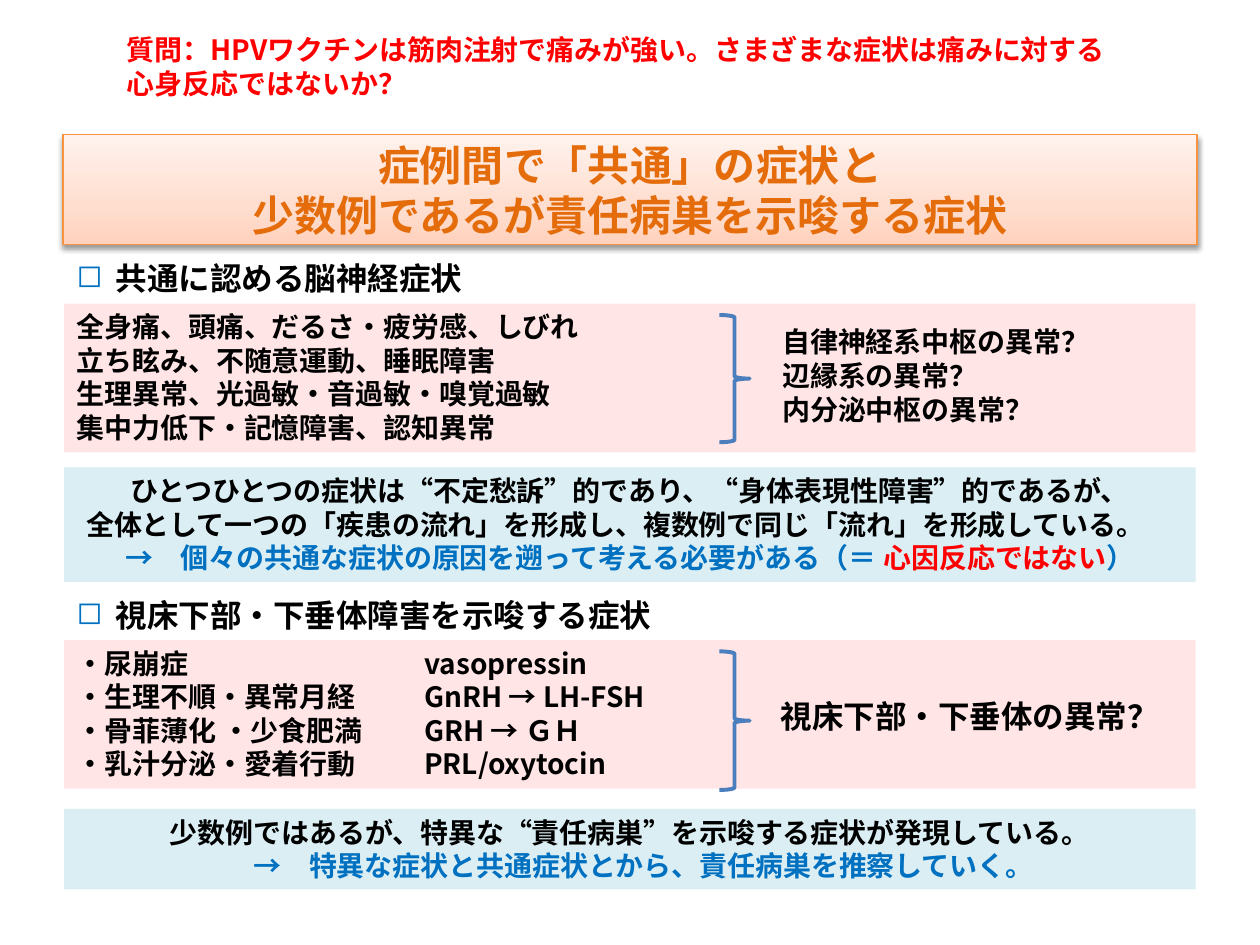
from copy import deepcopy
from dataclasses import dataclass

from pptx import Presentation
from pptx import util as u
from pptx.dml.color import RGBColor
from pptx.enum import shapes, text
from pptx.oxml import parse_xml
from pptx.oxml.ns import nsdecls, qn


@dataclass(frozen=True)
class Theme:
    font: str = "Noto Sans CJK JP"
    ink: str = "000000"
    red: str = "FF0000"
    blue: str = "0070C0"
    orange: str = "E46C0A"
    edge: str = "F69240"
    brace: str = "4B7EBC"
    pale_blue: str = "DBEEF4"
    gradient: tuple = ((0, "FFD2BD"), (0.35, "FFDED0"), (1, "FFF2ED"))
    title: int = 24
    heading: int = 18
    body: int = 16


THEME = Theme()
WIDTH, HEIGHT = 10, 7.5
LEFT, BAND = 0.51, 8.98          # left edge and width shared by all bands
BRACE_LEFT, BRACE_WIDTH = 5.71, 0.24
CENTER = text.PP_ALIGN.CENTER

TITLE = "症例間で「共通」の症状と\v少数例であるが責任病巣を示唆する症状"
QUESTION = ["質問：HPVワクチンは筋肉注射で痛みが強い。さまざまな症状は痛みに対する\t心身反応ではないか？"]

# A line is a string, or a list of (text, colour) pieces.
SECTIONS = [
    {
        "top": 2.01,
        "heading": "共通に認める脳神経症状",
        "symptoms": [
            "全身痛、頭痛、だるさ・疲労感、しびれ",
            "立ち眩み、不随意運動、睡眠障害",
            "生理異常、光過敏・音過敏・嗅覚過敏",
            "集中力低下・記憶障害、認知異常",
        ],
        "brace": (2.5, 1.01),
        "cause": ["自律神経系中枢の異常？", "辺縁系の異常？", "内分泌中枢の異常？"],
        "cause_at": (6.11, 2.53, 2.99, 0.91),
        "cause_size": THEME.body,
        "summary": [
            "ひとつひとつの症状は“不定愁訴”的であり、“身体表現性障害”的であるが、",
            "全体として一つの「疾患の流れ」を形成し、複数例で同じ「流れ」を形成している。　",
            [("→　個々の共通な症状の原因を遡って考える必要がある（＝ ", THEME.blue),
             ("心因反応ではない", THEME.red), ("）", THEME.blue)],
        ],
        "summary_at": (3.71, 0.91),
    },
    {
        "top": 4.68,
        "heading": "視床下部・下垂体障害を示唆する症状",
        "symptoms": [
            "・尿崩症\tvasopressin",
            "・生理不順・異常月経\tGnRH → LH-FSH",
            "・骨菲薄化 ・少食肥満\tGRH → ＧＨ",
            "・乳汁分泌・愛着行動\tPRL/oxytocin",
        ],
        "brace": (5.17, 1.1),
        "cause": ["視床下部・下垂体の異常？"],
        "cause_at": (6.1, 5.48, 3.23, 0.71),
        "cause_size": THEME.heading,
        "summary": [
            "少数例ではあるが、特異な“責任病巣”を示唆する症状が発現している。",
            [("　→　特異な症状と共通症状とから、責任病巣を推察していく。", THEME.blue)],
        ],
        "summary_at": (6.42, 0.64),
    },
]


def inches(*lengths):
    return [u.Inches(length) for length in lengths]


def style(font, size, color):
    font.size, font.bold, font.name = u.Pt(size), True, THEME.font
    font.color.rgb = RGBColor.from_string(color)
    font._element.find(qn("a:latin")).addnext(
        parse_xml(f'<a:ea {nsdecls("a")} typeface="{THEME.font}"/>'))


def write(box, lines, size=THEME.body, color=THEME.ink, align=text.PP_ALIGN.LEFT, tab=None):
    """Fill a box with bold lines; tab is a tab stop in inches from the text edge."""
    frame = box.text_frame
    frame.word_wrap = True
    frame.vertical_anchor = text.MSO_ANCHOR.TOP
    for number, line in enumerate(lines):
        para = frame.add_paragraph() if number else frame.paragraphs[0]
        para.alignment = align
        pieces = [(line, color)] if isinstance(line, str) else line
        for words, shade in pieces:
            span = para.add_run()
            span.text = words
            style(span.font, size, shade)
        if tab:
            para._p.get_or_add_pPr().append(parse_xml(
                f'<a:tabLst {nsdecls("a")}><a:tab pos="{u.Inches(tab)}" algn="l"/></a:tabLst>'))


def add_text(page, at, lines, **options):
    box = page.shapes.add_textbox(*inches(*at))
    write(box, lines, **options)
    return box


def add_band(page, top, height, color, lines, alpha=None, **options):
    box = page.shapes.add_shape(shapes.MSO_SHAPE.RECTANGLE, *inches(LEFT, top, BAND, height))
    box.shadow.inherit = False
    box.line.fill.background()
    box.fill.solid()
    box.fill.fore_color.rgb = RGBColor.from_string(color)
    if alpha:
        box._element.spPr.find(".//" + qn("a:srgbClr")).append(
            parse_xml(f'<a:alpha {nsdecls("a")} val="{alpha * 1000}"/>'))
    write(box, lines, **options)


def add_heading(page, top, words):
    box = add_text(page, (LEFT, top, 5.32, 0.4), [words], size=THEME.heading)
    props = box.text_frame.paragraphs[0]._p.get_or_add_pPr()
    indent = u.Inches(0.31)
    props.set("marL", str(indent))
    props.set("indent", str(-indent))
    for tag in (f'<a:buClr {nsdecls("a")}><a:srgbClr val="{THEME.blue}"/></a:buClr>',
                f'<a:buChar {nsdecls("a")} char="◻"/>'):
        props.append(parse_xml(tag))


def add_brace(page, top, height):
    brace = page.shapes.add_shape(
        shapes.MSO_SHAPE.RIGHT_BRACE, *inches(BRACE_LEFT, top, BRACE_WIDTH, height))
    brace.shadow.inherit = False
    brace.fill.background()
    brace.line.color.rgb = RGBColor.from_string(THEME.brace)
    brace.line.width = u.Pt(2.25)


def format_title(title):
    title.left, title.top, title.width, title.height = inches(0.5, 1.07, 9, 0.87)
    frame = title.text_frame
    frame.text = TITLE
    frame.auto_size = text.MSO_AUTO_SIZE.NONE
    frame.vertical_anchor = text.MSO_ANCHOR.MIDDLE
    para = frame.paragraphs[0]
    para.alignment = CENTER
    for span in para.runs:
        style(span.font, THEME.title, THEME.orange)
    title.fill.gradient()
    title.fill.gradient_angle = 90
    stops = title._element.spPr.find(".//" + qn("a:gsLst"))
    stops.append(deepcopy(stops[0]))
    for stop, (position, color) in zip(title.fill.gradient_stops, THEME.gradient):
        stop.position = position
        stop.color.rgb = RGBColor.from_string(color)
    title.line.color.rgb = RGBColor.from_string(THEME.edge)
    title.line.width = u.Pt(0.75)
    title._element.spPr.append(parse_xml(
        f'<a:effectLst {nsdecls("a")}><a:outerShdw blurRad="{u.Pt(3.1)}" dist="{u.Pt(1.6)}" '
        'dir="5400000" rotWithShape="0"><a:srgbClr val="000000"><a:alpha val="38000"/>'
        '</a:srgbClr></a:outerShdw></a:effectLst>'))


def main():
    deck = Presentation()
    deck.slide_width, deck.slide_height = inches(WIDTH, HEIGHT)
    page = deck.slides.add_slide(deck.slide_layouts[5])
    format_title(page.shapes.title)
    add_text(page, (0.91, 0.21, 8.27, 0.64), QUESTION, color=THEME.red, tab=1.1)
    for section in SECTIONS:
        add_heading(page, section["top"], section["heading"])
        add_band(page, section["top"] + 0.4, 1.18, THEME.red, section["symptoms"],
                 alpha=10, tab=2.76)
        add_brace(page, *section["brace"])
        add_text(page, section["cause_at"], section["cause"], size=section["cause_size"])
        add_band(page, *section["summary_at"], THEME.pale_blue, section["summary"], align=CENTER)
    deck.save("out.pptx")


if __name__ == "__main__":
    main()
